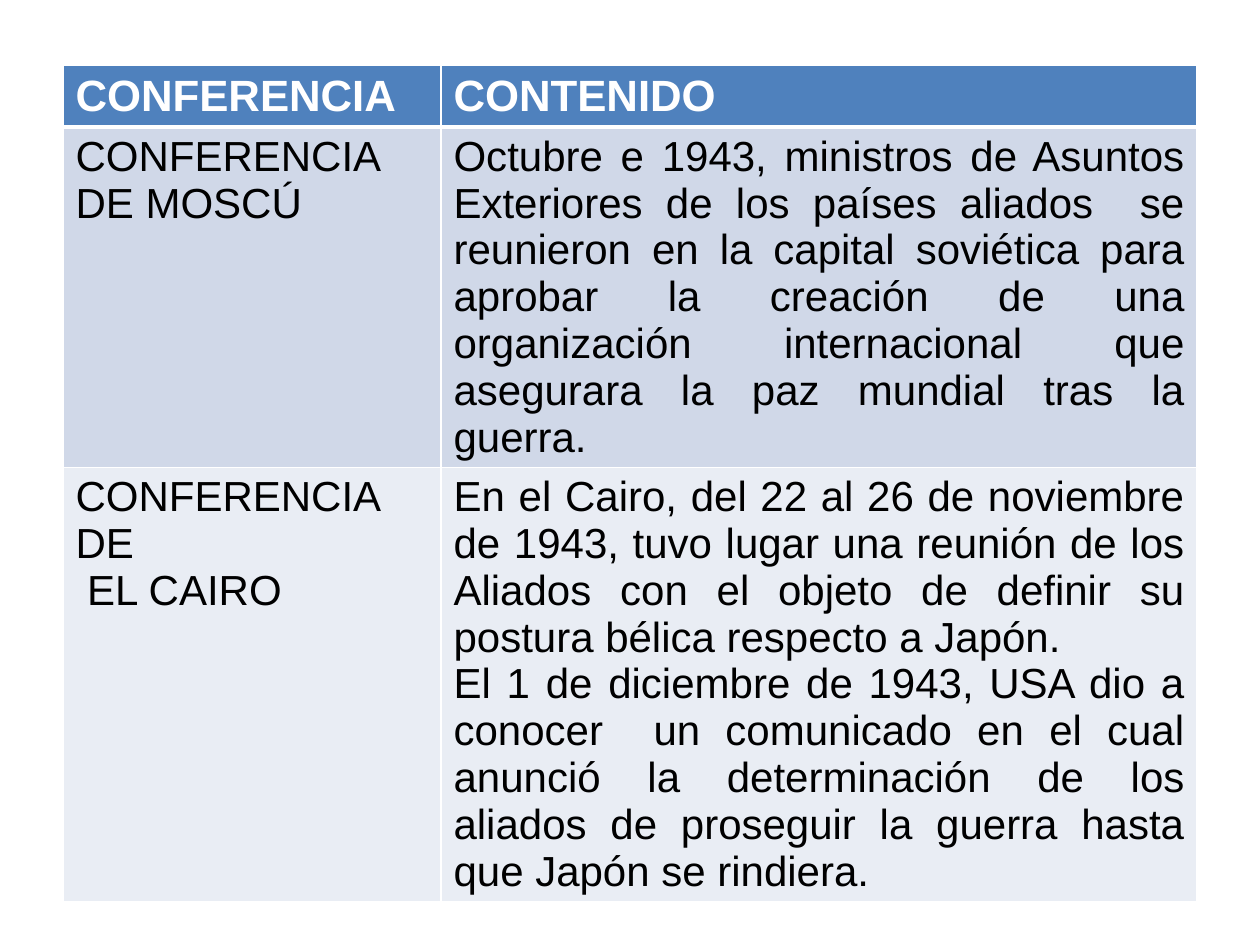
from dataclasses import dataclass

from lxml.etree import SubElement
from pptx import Presentation
from pptx.dml.color import RGBColor
from pptx.enum.text import PP_ALIGN
from pptx.oxml import parse_xml
from pptx.oxml.ns import nsdecls, qn
from pptx.table import _Cell
from pptx.util import Inches, Pt

COLORS = {
    "white": "FFFFFF",
    "black": "000000",
    "header": "4F81BD",
    "band_dark": "D0D8E8",
    "band_light": "E9EDF4",
}
COLUMN_WIDTHS = (3, 6)


@dataclass
class Row:
    height: float
    fill: str
    cells: tuple[tuple[str, ...], ...]  # paragraphs of each cell
    font: dict
    top_line: float = 1
    bottom_line: float = 1


HEADER_FONT = {"name": "Arial", "size": Pt(25), "bold": True, "color": "white"}
BODY_FONT = {"name": "Arial", "size": Pt(24), "bold": False, "color": "black"}

ROWS = (
    Row(0.48, "header", (("CONFERENCIA",), ("CONTENIDO",)), HEADER_FONT, bottom_line=3),
    Row(2.7, "band_dark", (
        ("CONFERENCIA ", "DE MOSCÚ"),
        ("Octubre e 1943, ministros de Asuntos Exteriores de los países aliados  se "
         "reunieron en la capital soviética para aprobar la creación de una "
         "organización internacional que asegurara la paz mundial tras la guerra.",),
    ), BODY_FONT, top_line=3),
    Row(3.44, "band_light", (
        ("CONFERENCIA DE", " EL CAIRO"),
        ("En el Cairo, del 22 al 26 de noviembre de 1943, tuvo lugar una reunión de los "
         "Aliados con el objeto de definir su postura bélica respecto a Japón.",
         "El 1 de diciembre de 1943, USA dio a conocer  un comunicado en el cual anunció "
         "la determinación de los aliados de proseguir la guerra hasta que Japón se "
         "rindiera."),
    ), BODY_FONT),
)


def set_borders(cell: _Cell, widths: dict[str, float]) -> None:
    """Put white borders ahead of the cell's fill, as the schema requires."""
    tc_pr = cell._tc.get_or_add_tcPr()
    for i, (side, width) in enumerate(widths.items()):
        ln = parse_xml(f'<a:ln{side} {nsdecls("a")} w="{Pt(width)}"/>')
        fill = SubElement(ln, qn("a:solidFill"))
        SubElement(fill, qn("a:srgbClr")).set("val", COLORS["white"])
        tc_pr.insert(i, ln)


def write_cell(cell: _Cell, paragraphs: tuple[str, ...], row: Row) -> None:
    tf = cell.text_frame
    for i, text in enumerate(paragraphs):
        p = tf.add_paragraph() if i else tf.paragraphs[0]
        p.alignment = PP_ALIGN.JUSTIFY
        r = p.add_run()
        r.text = text
        for name, value in row.font.items():
            if name == "color":
                r.font.color.rgb = RGBColor.from_string(COLORS[value])
            else:
                setattr(r.font, name, value)
    cell.fill.solid()
    cell.fill.fore_color.rgb = RGBColor.from_string(COLORS[row.fill])
    set_borders(cell, {"L": 1, "R": 1, "T": row.top_line, "B": row.bottom_line})


def main() -> None:
    prs = Presentation()
    prs.slide_width, prs.slide_height = Inches(10), Inches(7.5)
    s = prs.slides.add_slide(prs.slide_layouts[6])
    table = s.shapes.add_table(
        len(ROWS), len(COLUMN_WIDTHS), Inches(0.5), Inches(0.52),
        Inches(sum(COLUMN_WIDTHS)), Inches(sum(row.height for row in ROWS)),
    ).table
    for column, width in zip(table.columns, COLUMN_WIDTHS):
        column.width = Inches(width)
    for i, row in enumerate(ROWS):
        table.rows[i].height = Inches(row.height)
        for j, paragraphs in enumerate(row.cells):
            write_cell(table.cell(i, j), paragraphs, row)
    prs.save("out.pptx")


if __name__ == "__main__":
    main()
